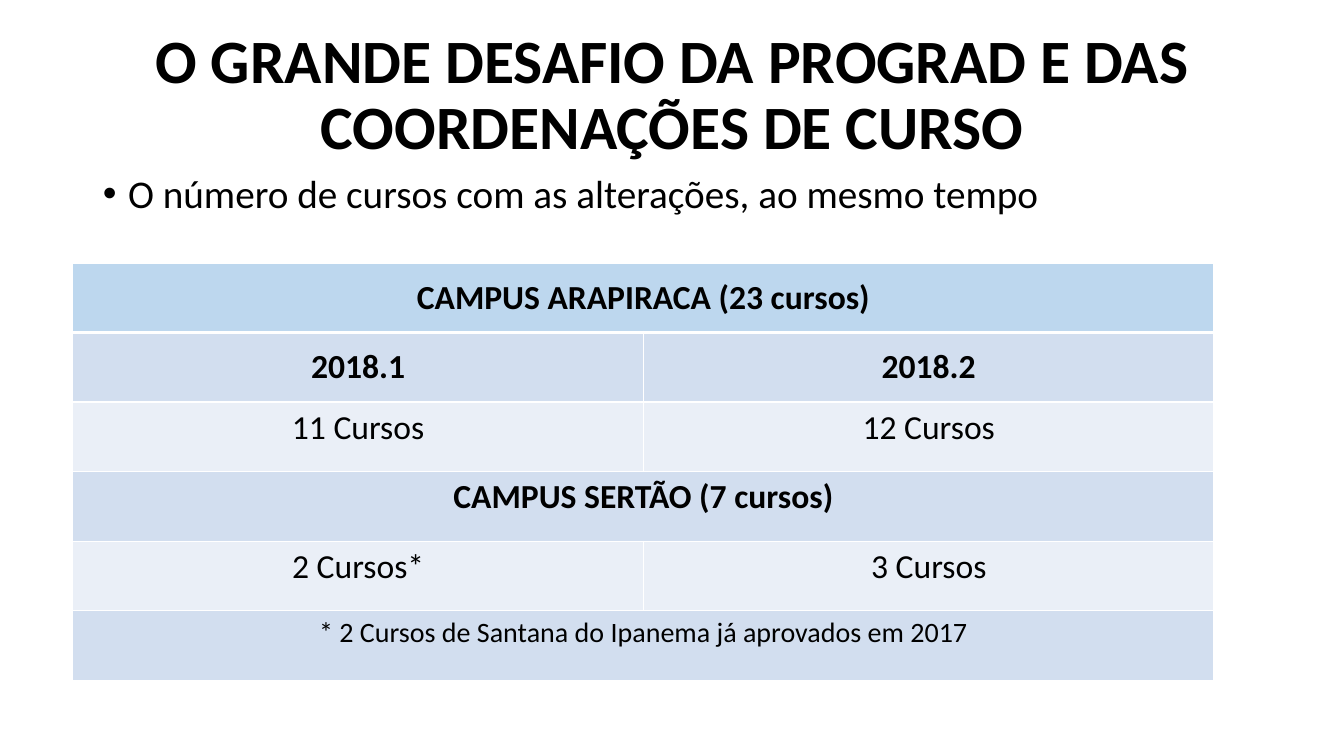
import pptx
import pptx.dml.color
import pptx.enum.text
import pptx.oxml
import pptx.oxml.ns
import pptx.util
from dataclasses import dataclass
from lxml import etree

ALIGN = pptx.enum.text.PP_ALIGN
ANCHOR = pptx.enum.text.MSO_ANCHOR


@dataclass
class Theme:
    font: str = "Calibri"
    text: str = "000000"
    border: str = "FFFFFF"
    header: str = "BDD7EE"
    dark_band: str = "D2DEEF"
    light_band: str = "EAEFF7"
    title_size: int = 44
    body_size: int = 28
    cell_size: int = 24
    note_size: int = 20
    border_width: int = 1
    header_border_width: int = 3


def color(value):
    return pptx.dml.color.RGBColor.from_string(value)


class SlideBuilder:
    GRID = 24

    def __init__(self, presentation, theme):
        self.theme = theme
        self.column = presentation.slide_width / self.GRID
        self.row = presentation.slide_height / self.GRID
        self.slide = presentation.slides.add_slide(presentation.slide_layouts[6])

    def place(self, left, top, width, height):
        return (round(left * self.column), round(top * self.row),
                round(width * self.column), round(height * self.row))

    def style(self, paragraph, size, bold=False, align=ALIGN.CENTER):
        paragraph.alignment = align
        font = paragraph.font
        font.name = self.theme.font
        font.size = pptx.util.Pt(size)
        font.bold = bold
        font.color.rgb = color(self.theme.text)

    def text_box(self, text, area, size, anchor=ANCHOR.TOP):
        frame = self.slide.shapes.add_textbox(*self.place(*area)).text_frame
        frame.word_wrap = True
        frame.vertical_anchor = anchor
        paragraph = frame.paragraphs[0]
        paragraph.text = text
        paragraph.line_spacing = 0.9
        return paragraph

    def title(self, text, area):
        size = self.theme.title_size
        paragraph = self.text_box(text, area, size, ANCHOR.MIDDLE)
        self.style(paragraph, size, bold=True)

    def bullet(self, text, area):
        size = self.theme.body_size
        paragraph = self.text_box(text, area, size)
        properties = paragraph._p.get_or_add_pPr()
        indent = pptx.util.Inches(0.25)
        properties.set("marL", str(indent))
        properties.set("indent", str(-indent))
        etree.SubElement(properties, pptx.oxml.ns.qn("a:buFont"), typeface="Arial")
        etree.SubElement(properties, pptx.oxml.ns.qn("a:buChar"), char="•")
        self.style(paragraph, size, align=ALIGN.LEFT)

    def borders(self, cell, is_header, below_header):
        theme = self.theme
        properties = cell._tc.get_or_add_tcPr()
        thick = {"lnB": is_header, "lnT": below_header}
        for position, side in enumerate(("lnL", "lnR", "lnT", "lnB")):
            width = theme.header_border_width if thick.get(side) else theme.border_width
            properties.insert(position, pptx.oxml.parse_xml(
                f'<a:{side} {pptx.oxml.ns.nsdecls("a")} w="{pptx.util.Pt(width)}">'
                f'<a:solidFill><a:srgbClr val="{theme.border}"/></a:solidFill></a:{side}>'))

    def table(self, rows, area):
        theme = self.theme
        columns = max(len(texts) for texts, *_ in rows)
        table = self.slide.shapes.add_table(len(rows), columns, *self.place(*area)).table
        for row_index, (texts, size, bold, anchor) in enumerate(rows):
            if len(texts) < columns:
                table.cell(row_index, 0).merge(table.cell(row_index, columns - 1))
            band = theme.dark_band if row_index % 2 else theme.light_band
            for column_index in range(columns):
                cell = table.cell(row_index, column_index)
                cell.fill.solid()
                cell.fill.fore_color.rgb = color(band if row_index else theme.header)
                self.borders(cell, row_index == 0, row_index == 1)
                cell.vertical_anchor = anchor
                paragraph = cell.text_frame.paragraphs[0]
                if column_index < len(texts):
                    paragraph.text = texts[column_index]
                self.style(paragraph, size, bold)


def main():
    presentation = pptx.Presentation()
    presentation.slide_width = pptx.util.Inches(13.33)
    presentation.slide_height = pptx.util.Inches(7.5)
    theme = Theme()
    builder = SlideBuilder(presentation, theme)

    builder.title("O GRANDE DESAFIO DA PROGRAD E DAS COORDENAÇÕES DE CURSO",
                  (1.66, 0.74, 20.7, 4.64))
    builder.bullet("O número de cursos com as alterações, ao mesmo tempo",
                   (1.66, 5.38, 20.7, 16.22))
    size = theme.cell_size
    builder.table([
        (["CAMPUS ARAPIRACA (23 cursos)"], size, True, ANCHOR.MIDDLE),
        (["2018.1", "2018.2"], size, True, ANCHOR.MIDDLE),
        (["11 Cursos", "12 Cursos"], size, False, ANCHOR.TOP),
        (["CAMPUS SERTÃO (7 cursos)"], size, True, ANCHOR.TOP),
        (["2 Cursos*", "3 Cursos"], size, False, ANCHOR.TOP),
        (["* 2 Cursos de Santana do Ipanema já aprovados em 2017"],
         theme.note_size, False, ANCHOR.TOP),
    ], (1.3, 8.35, 20.38, 13.25))
    presentation.save("out.pptx")


if __name__ == "__main__":
    main()
